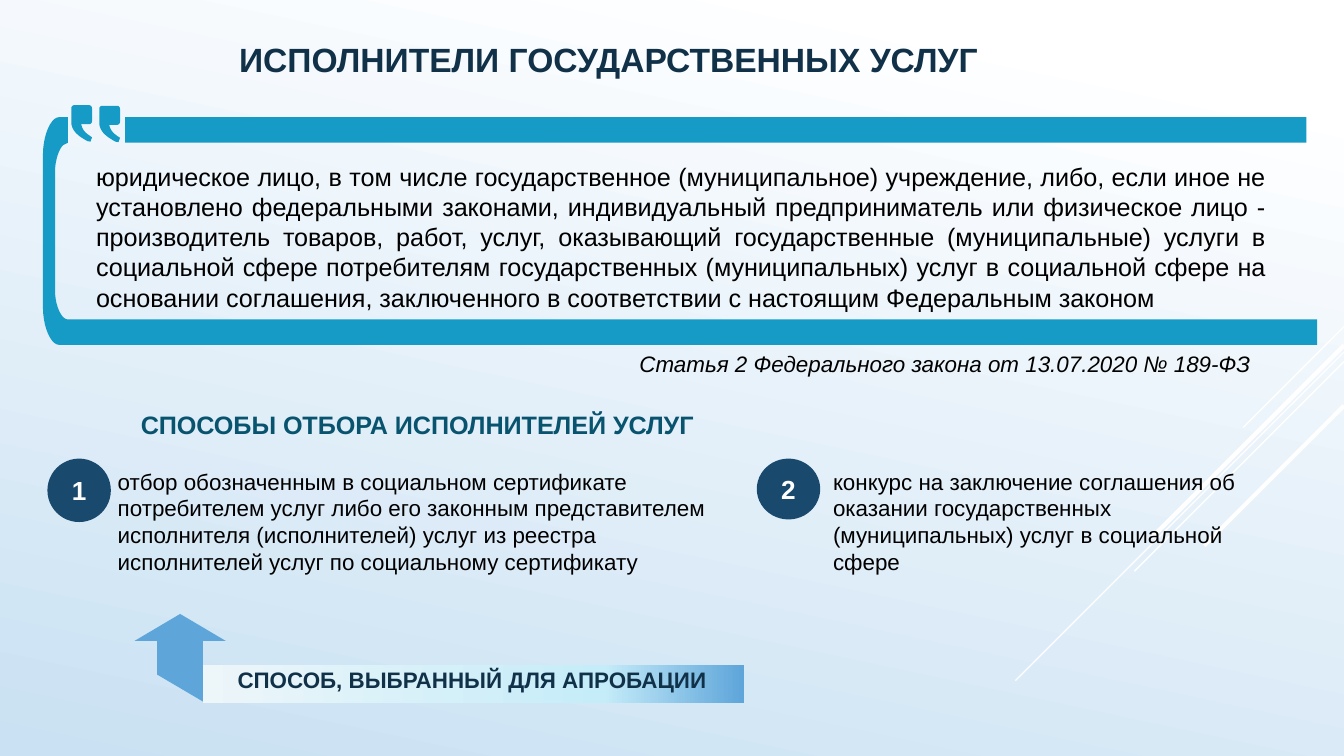
from copy import deepcopy
from dataclasses import dataclass

from pptx import Presentation
from pptx import util as u
from pptx.dml.color import RGBColor
from pptx.enum import shapes, text
from pptx.oxml import ns
from pptx.oxml.xmlchemy import OxmlElement


@dataclass(frozen=True)
class Theme:
    font: str = "Arial"
    ink: str = "000000"
    navy: str = "113149"
    teal: str = "08536E"
    badge: str = "19496D"
    quote: str = "169BC6"
    arrow: str = "5EA5DA"
    white: str = "FFFFFF"
    backdrop: tuple = ((10, "FFFFFF"), (100, "C9E1F3"))
    banner: tuple = ((0, "EDF6F9"), (74, "C5ECF9"), (100, "5EA5DA"))
    title: float = 18
    number: float = 14
    lead: float = 13.5
    body: float = 12


THEME = Theme()


def write(frame, content, *, size=THEME.body, color=THEME.ink, bold=False,
          italic=False, align=text.PP_ALIGN.LEFT):
    paragraph = frame.paragraphs[0]
    paragraph.alignment = align
    run = paragraph.add_run()
    run.text = content
    font = run.font
    font.name, font.size = THEME.font, u.Pt(size)
    font.bold, font.italic = bold, italic
    font.color.rgb = RGBColor.from_string(color)


def flatten(segments, steps=10):
    points = [segments[0]]
    for segment in segments[1:]:
        if len(segment) == 2:
            points.append(segment)
            continue
        controls = (points[-1], segment[:2], segment[2:4], segment[4:])
        for step in range(1, steps + 1):
            t = step / steps
            weights = ((1 - t) ** 3, 3 * t * (1 - t) ** 2, 3 * t * t * (1 - t), t ** 3)
            points.append(tuple(sum(w * c[axis] for w, c in zip(weights, controls))
                                for axis in (0, 1)))
    return points


class Canvas:
    """Draws styled elements on the current slide, with lengths in points."""

    def __init__(self, slide, theme):
        self.slide, self.theme = slide, theme

    def gradient(self, fill, element, stops, angle):
        fill.gradient()
        fill.gradient_angle = angle
        stop_list = element.find(".//" + ns.qn("a:gsLst"))
        for _ in range(len(stops) - len(stop_list)):
            stop_list.append(deepcopy(stop_list[0]))
        for stop, (position, color) in zip(fill.gradient_stops, stops):
            stop.position = position / 100
            stop.color.rgb = RGBColor.from_string(color)

    def backdrop(self):
        self.gradient(self.slide.background.fill, self.slide.element,
                      self.theme.backdrop, 258)

    def ray(self, top, reach, weight):
        edge = 720
        ray = self.slide.shapes.add_connector(
            shapes.MSO_CONNECTOR.STRAIGHT, u.Pt(edge), u.Pt(top),
            u.Pt(edge - reach), u.Pt(top + reach))
        ray.line.color.rgb = RGBColor.from_string(self.theme.white)
        ray.line.width = u.Pt(weight)
        ray.element.spPr.append(OxmlElement("a:effectLst"))

    def label(self, box, content, **style):
        label = self.slide.shapes.add_textbox(*map(u.Pt, box))
        label.text_frame.word_wrap = True
        label.text_frame.auto_size = text.MSO_AUTO_SIZE.SHAPE_TO_FIT_TEXT
        write(label.text_frame, content, **style)

    def outline(self, contours, color, left=0, top=0):
        builder = None
        for contour in contours:
            points = [(u.Pt(left + x), u.Pt(top + y)) for x, y in flatten(contour)]
            if builder is None:
                builder = self.slide.shapes.build_freeform(*points[0], scale=1.0)
            else:
                builder.move_to(*points[0])
            builder.add_line_segments(points[1:], close=True)
        self.paint(builder.convert_to_shape(), color)

    def paint(self, shape, color=None):
        shape.shadow.inherit = False
        shape.line.fill.background()
        if color:
            shape.fill.solid()
            shape.fill.fore_color.rgb = RGBColor.from_string(color)

    def banner(self, box):
        banner = self.slide.shapes.add_shape(
            shapes.MSO_SHAPE.RECTANGLE, *map(u.Pt, box))
        self.paint(banner)
        self.gradient(banner.fill, banner.element, self.theme.banner, 0)

    def badge(self, box, number):
        badge = self.slide.shapes.add_shape(shapes.MSO_SHAPE.OVAL, *map(u.Pt, box))
        self.paint(badge, self.theme.badge)
        badge.text_frame.vertical_anchor = text.MSO_ANCHOR.MIDDLE
        write(badge.text_frame, number, size=self.theme.number,
              color=self.theme.white, bold=True, align=text.PP_ALIGN.CENTER)


RAYS = ((175, 54, 0.75), (188.6, 176, 0.75), (193.7, 112.3, 0.75),
        (185, 103, 2.25), (217.4, 74.9, 2.25))
TOP_BAR = [(67, 62.8), (699.8, 62.8), (699.8, 76.5), (67, 76.5)]
BRACKET = [(31.7, 62.8), (36.4, 62.8), (36.4, 76.5), (33.8, 77.8),
           (31.7, 79.9, 29.5, 85.7, 29.5, 92.2), (29.5, 155.5),
           (29.5, 164.2, 33.1, 171.2, 36.4, 171.2), (705.6, 171.2),
           (705.6, 184.8), (31.7, 184.8), (27.4, 184.8, 23, 175.7, 23, 164.2),
           (23, 83.5), (23, 72, 27.4, 62.8, 31.7, 62.8)]
QUOTE_MARK = [(1.6, 0), (9.5, 0), (10.5, 0, 11.1, 0.7, 11.1, 1.8), (11.1, 8.5),
              (11.1, 9.5, 10.4, 10.2, 9.5, 10.2), (5.3, 10.2),
              (6, 13, 7.2, 14.4, 9.4, 16), (11.1, 17.2), (10.3, 19.5), (8.6, 19.2),
              (4.3, 16.8, 0.7, 14.4, 0, 9.8), (0, 1.8), (0, 0.7, 0.7, 0, 1.6, 0)]
ARROW = [(96.5, 328.9), (121, 343.4), (108.7, 343.4), (108.7, 375.8),
         (84.2, 361.4), (84.2, 343.4), (72, 343.4)]
DEFINITION = (
    "юридическое лицо, в том числе государственное (муниципальное) учреждение, либо, "
    "если иное не установлено федеральными законами, индивидуальный предприниматель "
    "или физическое лицо - производитель товаров, работ, услуг, оказывающий "
    "государственные (муниципальные) услуги в социальной сфере потребителям "
    "государственных (муниципальных) услуг в социальной сфере на основании соглашения, "
    "заключенного в соответствии с настоящим Федеральным законом")
SELECTION = (
    "отбор обозначенным в социальном сертификате потребителем услуг либо его законным "
    "представителем исполнителя (исполнителей) услуг из реестра исполнителей услуг "
    "по социальному сертификату")
CONTEST = ("конкурс на заключение соглашения об оказании государственных "
           "(муниципальных) услуг в социальной сфере")


def main():
    deck = Presentation()
    deck.slide_width, deck.slide_height = u.Pt(720), u.Pt(405)
    canvas = Canvas(deck.slides.add_slide(deck.slide_layouts[6]), THEME)
    canvas.backdrop()
    for ray in RAYS:
        canvas.ray(*ray)

    canvas.label((121, 17.3, 573, 29), "ИСПОЛНИТЕЛИ ГОСУДАРСТВЕННЫХ УСЛУГ",
                 size=THEME.title, color=THEME.navy, bold=True)
    canvas.label((44.4, 82.8, 641, 89.3), DEFINITION,
                 size=THEME.lead, align=text.PP_ALIGN.JUSTIFY)
    canvas.outline([TOP_BAR, BRACKET], THEME.quote)
    for left, top in ((53.2, 56.7), (38.2, 56.4)):
        canvas.outline([QUOTE_MARK], THEME.quote, left, top)
    canvas.label((335.5, 184.3, 364.3, 21.6),
                 "Статья 2 Федерального закона от 13.07.2020 № 189-ФЗ", italic=True)

    canvas.label((68.4, 216, 329, 23.8), "СПОСОБЫ ОТБОРА ИСПОЛНИТЕЛЕЙ УСЛУГ",
                 size=THEME.lead, color=THEME.teal, bold=True,
                 align=text.PP_ALIGN.JUSTIFY)
    canvas.outline([ARROW], THEME.arrow)
    canvas.banner((108.7, 356.3, 290, 20.2))
    for left, width, method in ((56, 342.7, SELECTION), (439.2, 232.6, CONTEST)):
        canvas.label((left, 247, width, 65.5), method)
    canvas.label((120.2, 353.5, 269.3, 21.6), "СПОСОБ, ВЫБРАННЫЙ ДЛЯ АПРОБАЦИИ",
                 color=THEME.navy, bold=True)
    for number, left, height in (("1", 25.4, 34), ("2", 405.4, 32.6)):
        canvas.badge((left, 245.7, 34, height), number)
    deck.save("out.pptx")


if __name__ == "__main__":
    main()
